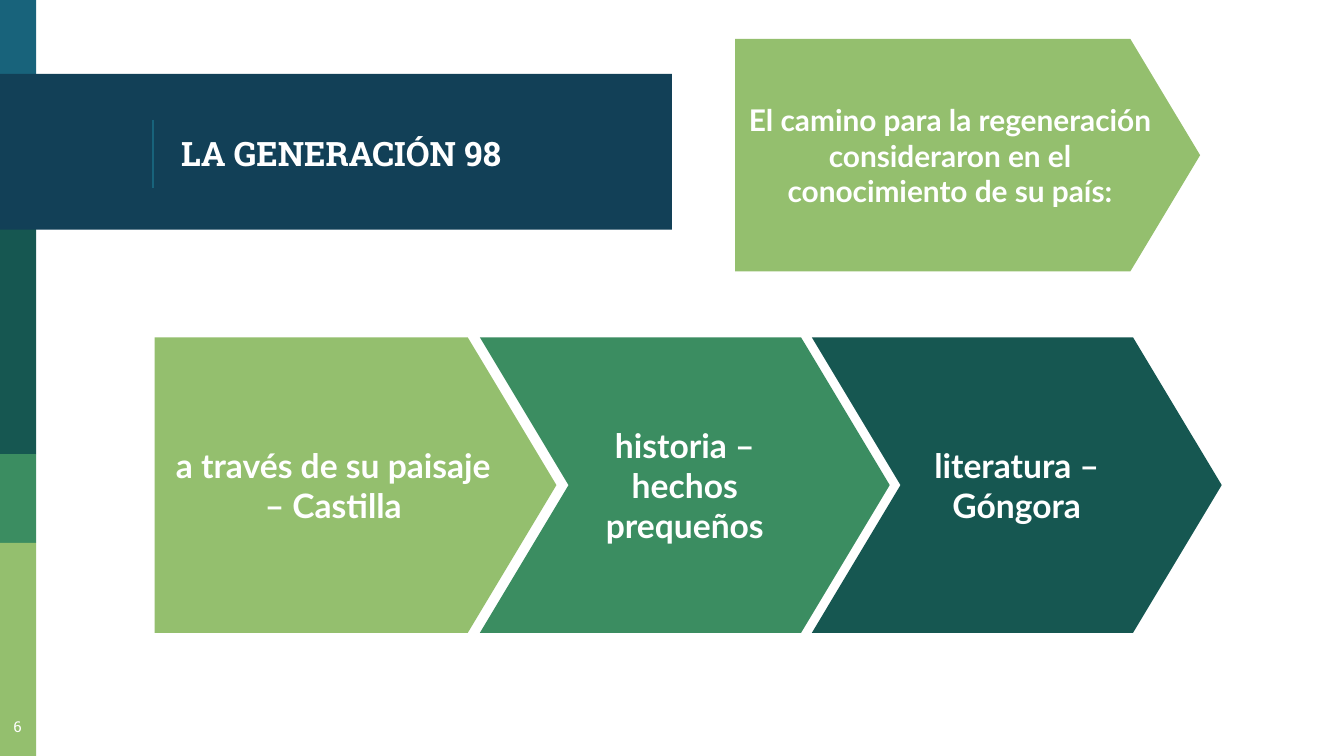
import pptx
import pptx.dml.color
import pptx.enum.shapes
import pptx.enum.text
import pptx.oxml.ns
import pptx.util
from lxml import etree

Inches = pptx.util.Inches
SHAPES = pptx.enum.shapes.MSO_SHAPE
ALIGN = pptx.enum.text.PP_ALIGN
ANCHOR = pptx.enum.text.MSO_ANCHOR

COLORS = {
    "blue": "18637B",
    "navy": "124057",
    "teal": "165751",
    "green": "3B8D61",
    "lime": "94BF6E",
    "white": "FFFFFF",
}


def rgb(name):
    return pptx.dml.color.RGBColor.from_string(COLORS[name])


def write(shape, text, size, font="Lato", bold=True, align=ALIGN.CENTER, anchor=ANCHOR.MIDDLE):
    frame = shape.text_frame
    frame.word_wrap = True
    frame.vertical_anchor = anchor
    frame.margin_left = frame.margin_right = Inches(0.1)
    frame.margin_top = frame.margin_bottom = Inches(0.1)
    paragraph = frame.paragraphs[0]
    paragraph.text = text
    paragraph.alignment = align
    paragraph.font.size = pptx.util.Pt(size)
    paragraph.font.name = font
    paragraph.font.bold = bold
    paragraph.font.color.rgb = rgb("white")


def add_block(slide, kind, left, top, width, height, color):
    shape = slide.shapes.add_shape(kind, Inches(left), Inches(top), Inches(width), Inches(height))
    shape.shadow.inherit = False
    shape.fill.solid()
    shape.fill.fore_color.rgb = rgb(color)
    shape.line.fill.background()
    return shape


def add_arrow(slide, kind, left, top, width, height, color, text, size):
    arrow = add_block(slide, kind, left, top, width, height, color)
    arrow.adjustments[0] = 0.3
    write(arrow, text, size)


def add_text(slide, left, top, width, height, text, size, **style):
    box = slide.shapes.add_textbox(Inches(left), Inches(top), Inches(width), Inches(height))
    write(box, text, size, font="Roboto Slab", **style)


def add_sidebar(slide, left, top, width, height):
    # Each band runs down to the start of the next one
    bands = [(0, "blue"), (1.7, "teal"), (3.38, "green"), (4.04, "lime")]
    ends = [start for start, _ in bands[1:]] + [height]
    for (start, color), end in zip(bands, ends):
        add_block(slide, SHAPES.RECTANGLE, left, top + start, width, end - start, color)

    # Page number
    add_text(slide, left - 0.06, top + height - 0.36, width + 0.11, 0.35, "6", 8,
             bold=False, anchor=ANCHOR.TOP)


def add_title_banner(slide, left, top, width, height):
    add_block(slide, SHAPES.RECTANGLE, left, top, width, height, "navy")

    # Thin rule before the title
    rule = slide.shapes.add_connector(
        pptx.enum.shapes.MSO_CONNECTOR.STRAIGHT,
        Inches(left + 1.14), Inches(top + 0.34), Inches(left + 1.14), Inches(top + 0.85))
    rule.line.color.rgb = rgb("blue")
    rule.line.width = pptx.util.Pt(0.75)
    etree.SubElement(rule._element.spPr, pptx.oxml.ns.qn("a:effectLst"))

    add_text(slide, left + 1.25, top + 0.03, 3.51, 1.12, "LA GENERACIÓN 98", 18,
             align=ALIGN.LEFT)


def add_process(slide, left, top, width, height):
    steps = [
        ("a través de su paisaje – Castilla", "lime"),
        ("historia – hechos prequeños", "green"),
        ("literatura – Góngora", "teal"),
    ]
    pitch, chevron_width, first_width = 2.47, 3.05, 2.99
    for index, (text, color) in enumerate(steps):
        if index == 0:
            kind, step_left, step_width = SHAPES.PENTAGON, left, first_width
        else:
            # Chevrons are spaced back from the right edge
            kind, step_width = SHAPES.CHEVRON, chevron_width
            step_left = left + width - chevron_width - pitch * (len(steps) - 1 - index)
        add_arrow(slide, kind, step_left, top, step_width, height, color, text, 18)


def main():
    presentation = pptx.Presentation()
    # Widescreen, 16:9
    presentation.slide_width = Inches(10)
    presentation.slide_height = Inches(10 * 9 / 16)
    slide = presentation.slides.add_slide(presentation.slide_layouts[6])

    add_sidebar(slide, 0, 0, 0.27, 5.63)
    add_title_banner(slide, 0, 0.55, 5, 1.16)
    add_process(slide, 1.15, 2.51, 7.94, 2.2)
    add_arrow(slide, SHAPES.PENTAGON, 5.47, 0.29, 3.46, 1.73, "lime",
              "El camino para la regeneración consideraron en el conocimiento de su país:", 16)

    presentation.save("out.pptx")


if __name__ == "__main__":
    main()
